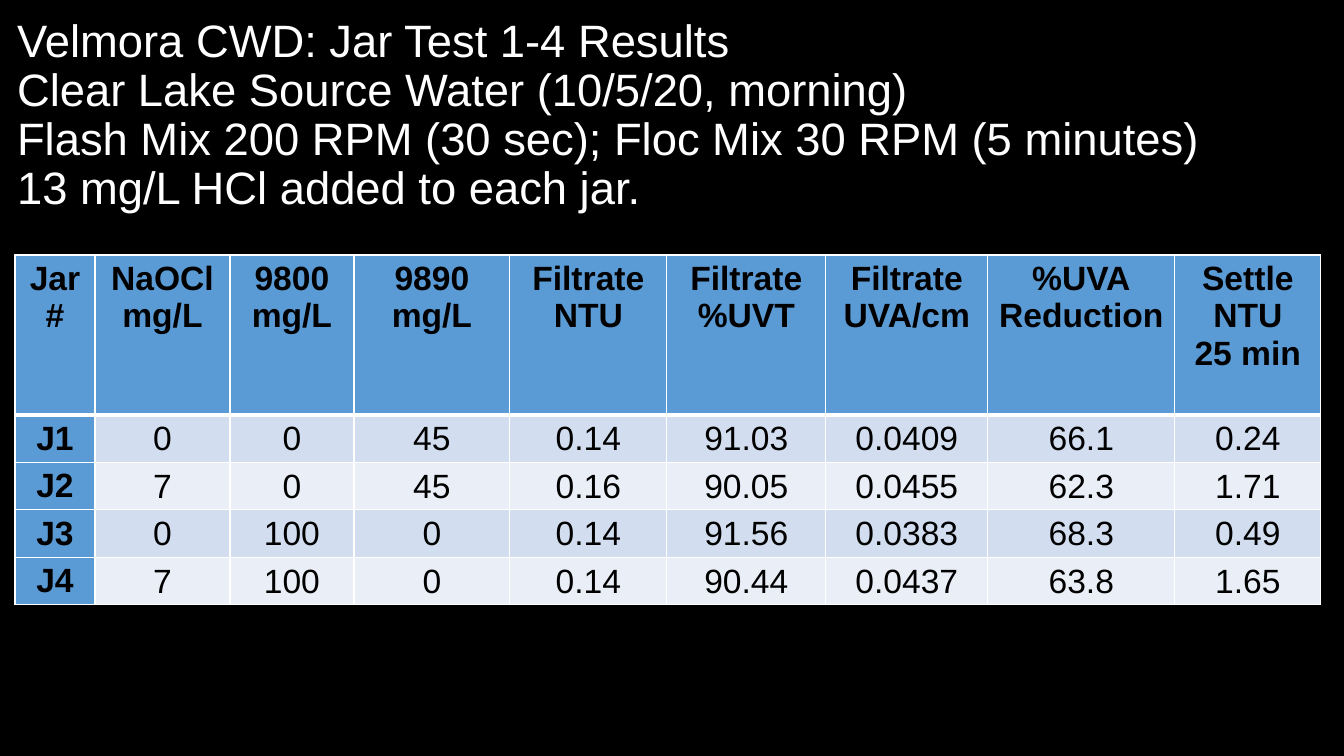
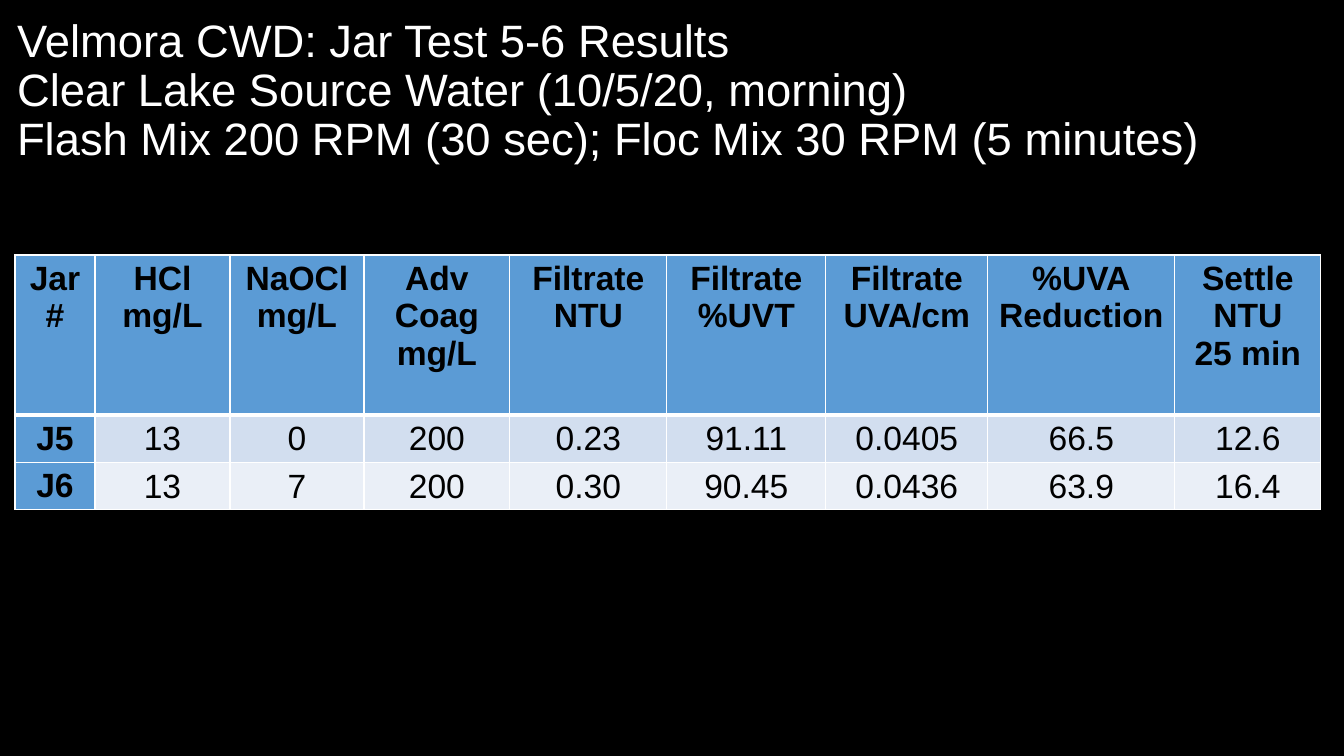
from dataclasses import dataclass

from lxml.etree import SubElement
from pptx import Presentation
from pptx.dml.color import RGBColor as Rgb
from pptx.enum.text import MSO_ANCHOR as Anchor, MSO_AUTO_SIZE as AutoSize, PP_ALIGN as Align
from pptx.oxml.ns import qn
from pptx.util import Emu, Pt


@dataclass(frozen=True)
class Theme:
    font: str = "Arial"
    title_size: float = 32.4
    cell_size: int = 24
    background: str = "000000"
    title_ink: str = "FFFFFF"
    cell_ink: str = "000000"
    border: str = "FFFFFF"
    header: str = "5B9BD5"
    bands: tuple = ("D2DEEF", "EAEFF7")
    thin: int = 1
    thick: int = 3


THEME = Theme()
PAGE_WIDTH, PAGE_HEIGHT = 1344, 756
TITLE_BOX = (7, 13, 1313, 210)
TABLE_LEFT, TABLE_TOP = 15, 255
HEADER_HEIGHT, ROW_HEIGHT = 160, 47
HEADER_INSETS = (10, 5, 10, 5)
BODY_INSETS = (1, 1, 1, 0)

# Lines and columns that both slides share
SAMPLE_LINES = ["Clear Lake Source Water (10/5/20, morning)",
                "Flash Mix 200 RPM (30 sec); Floc Mix 30 RPM (5 minutes)"]
JAR_COLUMN = ("Jar\n#", 80)
RESULT_COLUMNS = [("Filtrate\nNTU", 157), ("Filtrate\n%UVT", 159), ("Filtrate\nUVA/cm", 162),
                  ("%UVA\nReduction", 187), ("Settle\nNTU\n25 min", 146)]

# Each slide: title lines, dose columns (heading, width) and one row per jar
SLIDES = [
    (["Velmora CWD: Jar Test 1-4 Results", *SAMPLE_LINES, "13 mg/L HCl added to each jar."],
     [("NaOCl\nmg/L", 135), ("9800\nmg/L", 124), ("9890\nmg/L", 156)],
     [("J1", "0", "0", "45", "0.14", "91.03", "0.0409", "66.1", "0.24"),
      ("J2", "7", "0", "45", "0.16", "90.05", "0.0455", "62.3", "1.71"),
      ("J3", "0", "100", "0", "0.14", "91.56", "0.0383", "68.3", "0.49"),
      ("J4", "7", "100", "0", "0.14", "90.44", "0.0437", "63.8", "1.65")]),
    (["Velmora CWD: Jar Test 5-6 Results", *SAMPLE_LINES],
     [("HCl\nmg/L", 135), ("NaOCl\nmg/L", 134), ("Adv\nCoag\nmg/L", 146)],
     [("J5", "13", "0", "200", "0.23", "91.11", "0.0405", "66.5", "12.6"),
      ("J6", "13", "7", "200", "0.30", "90.45", "0.0436", "63.9", "16.4")]),
]


def px(length):
    return Emu(round(length * 12192000 / PAGE_WIDTH))


def write_text(frame, text, *, size, color, bold=False, align=Align.LEFT, spacing=None):
    """Newlines start paragraphs; vertical tabs break lines."""
    frame.text = text
    for para in frame.paragraphs:
        para.alignment = align
        para.line_spacing = spacing
        for span in para.runs:
            span.font.name = THEME.font
            span.font.size = Pt(size)
            span.font.bold = bold
            span.font.color.rgb = Rgb.from_string(color)


def set_borders(cell, *, top, bottom):
    props = cell._tc.get_or_add_tcPr()
    sides = {"lnL": THEME.thin, "lnR": THEME.thin, "lnT": top, "lnB": bottom}
    for side, width in sides.items():
        line = SubElement(props, qn(f"a:{side}"), w=str(Pt(width)))
        fill = SubElement(line, qn("a:solidFill"))
        SubElement(fill, qn("a:srgbClr"), val=THEME.border)


def format_cell(cell, text, *, row, column):
    is_label = row == 0 or column == 0
    set_borders(cell, top=THEME.thick if row == 1 else THEME.thin,
                bottom=THEME.thick if row == 0 else THEME.thin)
    cell.fill.solid()
    color = THEME.header if is_label else THEME.bands[(row - 1) % 2]
    cell.fill.fore_color.rgb = Rgb.from_string(color)
    insets = HEADER_INSETS if is_label else BODY_INSETS
    cell.margin_left, cell.margin_top, cell.margin_right, cell.margin_bottom = map(px, insets)
    cell.vertical_anchor = Anchor.TOP if is_label else Anchor.MIDDLE
    write_text(cell.text_frame, text, size=THEME.cell_size, color=THEME.cell_ink,
               bold=is_label, align=Align.CENTER)


def set_title(page, lines):
    title = page.shapes.title
    title.left, title.top, title.width, title.height = map(px, TITLE_BOX)
    frame = title.text_frame
    frame.word_wrap = True
    frame.auto_size = AutoSize.NONE
    frame.vertical_anchor = Anchor.TOP
    write_text(frame, "\v".join(lines), size=THEME.title_size, color=THEME.title_ink, spacing=0.9)


def add_results(page, columns, jars):
    headings, widths = zip(*columns)
    rows = [headings, *jars]
    heights = [HEADER_HEIGHT] + [ROW_HEIGHT] * len(jars)
    table = page.shapes.add_table(len(rows), len(columns), px(TABLE_LEFT), px(TABLE_TOP),
                                  px(sum(widths)), px(sum(heights))).table
    table.first_col = True
    for column, width in zip(table.columns, widths):
        column.width = px(width)
    for row, height in zip(table.rows, heights):
        row.height = px(height)
    for row, texts in enumerate(rows):
        for column, text in enumerate(texts):
            format_cell(table.cell(row, column), text, row=row, column=column)


def main():
    deck = Presentation()
    deck.slide_width, deck.slide_height = px(PAGE_WIDTH), px(PAGE_HEIGHT)
    # Shared background
    backdrop = deck.slide_master.background.fill
    backdrop.solid()
    backdrop.fore_color.rgb = Rgb.from_string(THEME.background)
    # Result slides
    title_only = deck.slide_layouts.get_by_name("Title Only")
    for title_lines, dose_columns, jars in SLIDES:
        page = deck.slides.add_slide(title_only)
        set_title(page, title_lines)
        add_results(page, [JAR_COLUMN, *dose_columns, *RESULT_COLUMNS], jars)
    deck.save("out.pptx")


if __name__ == "__main__":
    main()
